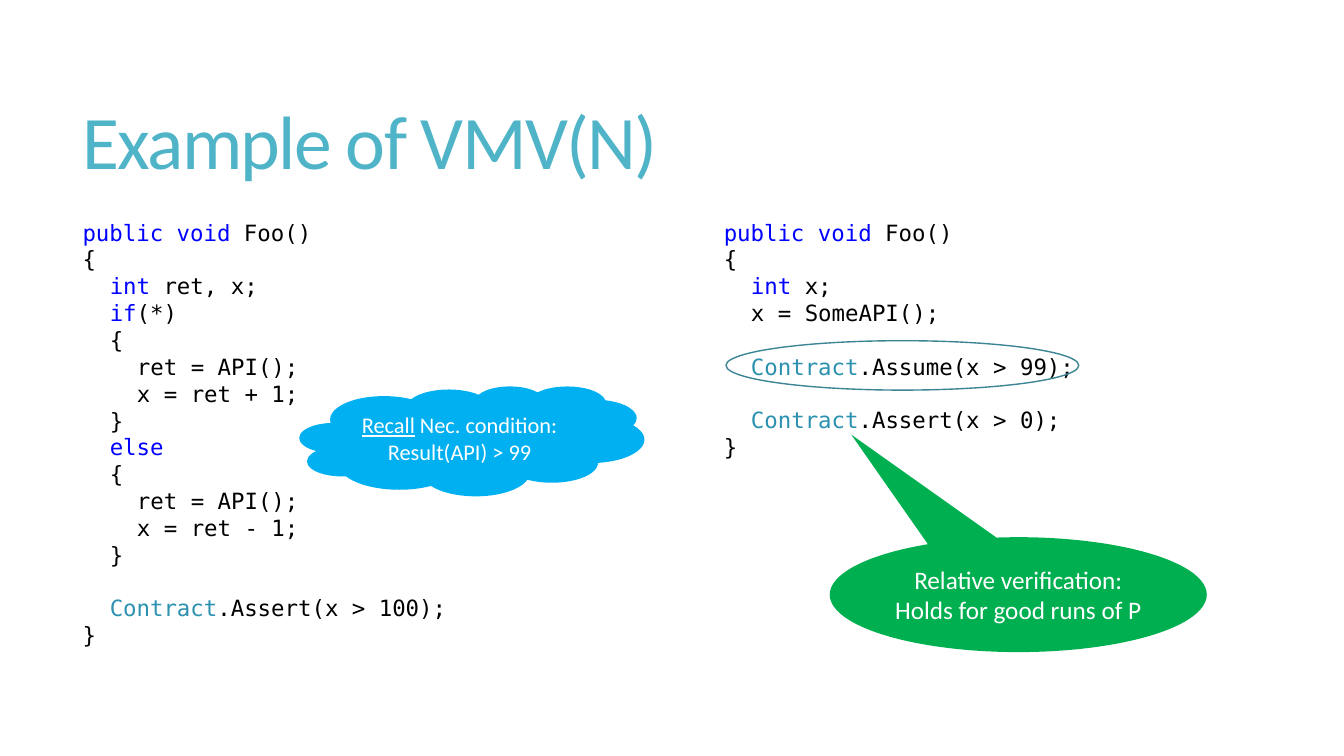
from pptx import Presentation
from pptx.dml.color import RGBColor
from pptx.enum.shapes import MSO_SHAPE as Preset
from pptx.enum.text import MSO_ANCHOR as Anchor, MSO_AUTO_SIZE as AutoSize, PP_ALIGN as Align
from pptx.util import Inches, Pt

COLORS = {
    "title": "50B4C8",
    "keyword": "0000FF",
    "type": "2B91AF",
    "code": "000000",
    "outline": "3B8594",
    "callout": "00B050",
    "cloud": "00B0F0",
    "white": "FFFFFF",
}
TOKEN_COLORS = {
    **dict.fromkeys(("public", "void", "int", "if", "else"), "keyword"),
    "Contract": "type",
}
BODY_FONT = "Calibri"
CODE_FONT = "DejaVu Sans Mono"
CODE_INDENT = Inches(0.27)
CODE_GAP = Pt(19)

BRANCHING_CODE = [
    (0, "public| |void| Foo()"),
    (0, "{"),
    (1, "int| ret, x;"),
    (1, "if|(*)"),
    (1, "{"),
    (2, "ret = API();"),
    (2, "x = ret + 1;"),
    (1, "}"),
    (1, "else"),
    (1, "{"),
    (2, "ret = API();"),
    (2, "x = ret - 1;"),
    (1, "}"),
    (1, "Contract|.Assert(x > 100);", CODE_GAP),
    (0, "}"),
]
ASSUMING_CODE = [
    (0, "public| |void| Foo()"),
    (0, "{"),
    (1, "int| x;"),
    (1, "x = SomeAPI();"),
    (1, "Contract|.Assume(x > 99);", CODE_GAP),
    (1, "Contract|.Assert(x > 0);", CODE_GAP),
    (0, "}"),
]


def rgb(name):
    return RGBColor.from_string(COLORS[name])


def add_run(paragraph, text, size, color, font=BODY_FONT):
    run = paragraph.add_run()
    run.text = text
    run.font.size = Pt(size)
    run.font.name = font
    run.font.color.rgb = rgb(color)
    return run


def paragraphs(frame, count):
    return [frame.paragraphs[0]] + [frame.add_paragraph() for _ in range(count - 1)]


def add_frame(slide, box):
    frame = slide.shapes.add_textbox(*map(Inches, box)).text_frame
    frame.word_wrap = True
    return frame


def add_title(slide, box, text):
    frame = add_frame(slide, box)
    frame.vertical_anchor = Anchor.MIDDLE
    heading = frame.paragraphs[0]
    heading.line_spacing = 0.85
    run = add_run(heading, text, 54, "title")
    run.font._element.set("spc", "-120")


def add_code(slide, box, lines):
    frame = add_frame(slide, box)
    frame.auto_size = AutoSize.SHAPE_TO_FIT_TEXT
    for paragraph, (level, code, *gap) in zip(paragraphs(frame, len(lines)), lines):
        properties = paragraph._p.get_or_add_pPr()
        properties.set("marL", str(level * CODE_INDENT))
        properties.set("indent", "0")
        if gap:
            paragraph.space_before = gap[0]
        for token in code.split("|"):
            add_run(paragraph, token, 16, TOKEN_COLORS.get(token, "code"), CODE_FONT)


def add_preset(slide, preset, box, fill=None, outline=None):
    shape = slide.shapes.add_shape(preset, *map(Inches, box))
    shape.shadow.inherit = False
    if fill:
        shape.fill.solid()
        shape.fill.fore_color.rgb = rgb(fill)
    else:
        shape.fill.background()
    if outline:
        shape.line.color.rgb = rgb(outline)
        shape.line.width = Pt(1)
    else:
        shape.line.fill.background()
    return shape


def add_remark(shape, size, lines, underlined=()):
    frame = shape.text_frame
    frame.word_wrap = True
    frame.vertical_anchor = Anchor.MIDDLE
    for paragraph, parts in zip(paragraphs(frame, len(lines)), lines):
        paragraph.alignment = Align.CENTER
        for part in parts:
            run = add_run(paragraph, part, size, "white")
            if part in underlined:
                run.font.underline = True


def main():
    deck = Presentation()
    deck.slide_width, deck.slide_height = Inches(13.33), Inches(7.5)
    slide = deck.slides.add_slide(deck.slide_layouts[6])

    add_title(slide, (0.72, 0.55, 11.78, 1.81), "Example of VMV(N)")
    add_code(slide, (0.72, 2.12, 4.02, 4.41), BRANCHING_CODE)
    add_code(slide, (7.08, 2.12, 3.81, 2.52), ASSUMING_CODE)

    add_preset(slide, Preset.OVAL, (7.2, 3.38, 3.5, 0.49), outline="outline")

    verification = add_preset(
        slide, Preset.OVAL_CALLOUT, (8.23, 5.33, 3.74, 1.14), fill="callout")
    verification.adjustments[0] = -0.443
    verification.adjustments[1] = -1.393
    add_remark(verification, 18,
               [["Relative verification:"], ["Holds for good runs of P"]])

    condition = add_preset(slide, Preset.CLOUD, (2.97, 3.83, 3.42, 1.09), fill="cloud")
    add_remark(condition, 16,
               [["Recall", " Nec. condition:"], ["Result(API) > 99"]],
               underlined=("Recall",))

    deck.save("out.pptx")


if __name__ == "__main__":
    main()
